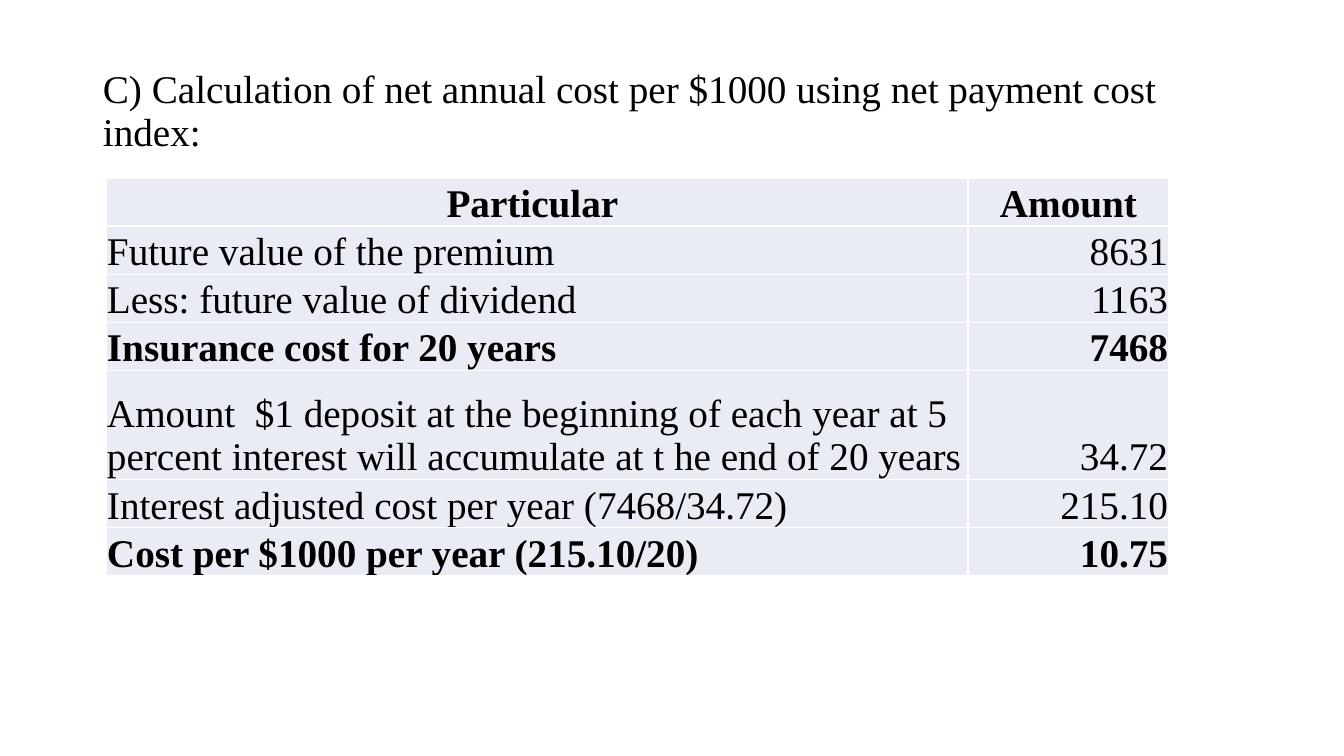
from lxml.etree import SubElement
from pptx import Presentation
from pptx.dml.color import RGBColor
from pptx.enum.text import MSO_ANCHOR as Anchor, PP_ALIGN as Align
from pptx.oxml.ns import qn
from pptx.util import Pt

PX = 914400 / 100.8
BLACK = RGBColor(0x00, 0x00, 0x00)
WHITE = RGBColor(0xFF, 0xFF, 0xFF)
PALE_BLUE = RGBColor(0xE9, 0xEB, 0xF5)

COLUMN_WIDTHS = (862, 201)
ROW_HEIGHT, TALL_ROW_HEIGHT = 36, 109
TALL_ROW = 4
BOLD_ROWS = (0, 3, 6)
ROWS = [
    ("Particular ", "Amount"),
    ("Future value of the premium", "8631"),
    ("Less: future value of dividend", "1163"),
    ("Insurance cost for 20 years", "7468"),
    ("Amount  $1 deposit at the beginning of each year at 5 percent "
     "interest will accumulate at t he end of 20 years", "34.72"),
    ("Interest adjusted cost per year (7468/34.72)", "215.10"),
    ("Cost per $1000 per year (215.10/20)", "10.75"),
]


def px(length):
    return round(length * PX)


def add_text(para, text, bold=False):
    span = para.add_run()
    span.text = text
    span.font.name = "Times New Roman"
    span.font.size = Pt(28)
    span.font.bold = bold
    span.font.color.rgb = BLACK


deck = Presentation()
deck.slide_width, deck.slide_height = px(1344), px(756)
page = deck.slides.add_slide(deck.slide_layouts[6])

# Heading
heading = page.shapes.add_textbox(px(93), px(65), px(1159), px(100)).text_frame
heading.word_wrap = True
heading.paragraphs[0].line_spacing = 0.9
add_text(heading.paragraphs[0],
         "C) Calculation of net annual cost per $1000 using net payment cost index:")

# Cost table
heights = [TALL_ROW_HEIGHT if i == TALL_ROW else ROW_HEIGHT for i in range(len(ROWS))]
cost_table = page.shapes.add_table(
    len(ROWS), len(COLUMN_WIDTHS), px(106), px(178),
    px(sum(COLUMN_WIDTHS)), px(sum(heights))).table
for column, width in zip(cost_table.columns, COLUMN_WIDTHS):
    column.width = px(width)

for row_index, (texts, height) in enumerate(zip(ROWS, heights)):
    cost_table.rows[row_index].height = px(height)
    for column_index, text in enumerate(texts):
        cell = cost_table.cell(row_index, column_index)
        cell.vertical_anchor = Anchor.BOTTOM
        cell.margin_left = cell.margin_right = cell.margin_top = px(1)
        cell.margin_bottom = 0
        para = cell.text_frame.paragraphs[0]
        if row_index == 0:
            para.alignment = Align.CENTER
        else:
            para.alignment = (Align.LEFT, Align.RIGHT)[column_index]
        add_text(para, text, row_index in BOLD_ROWS)

        # Borders must come before the fill in the cell properties
        properties = cell._tc.get_or_add_tcPr()
        for side in ("a:lnL", "a:lnR", "a:lnT", "a:lnB"):
            line = SubElement(properties, qn(side), w=str(Pt(1)))
            fill = SubElement(line, qn("a:solidFill"))
            SubElement(fill, qn("a:srgbClr"), val=str(WHITE))
        cell.fill.solid()
        cell.fill.fore_color.rgb = PALE_BLUE

deck.save("out.pptx")
